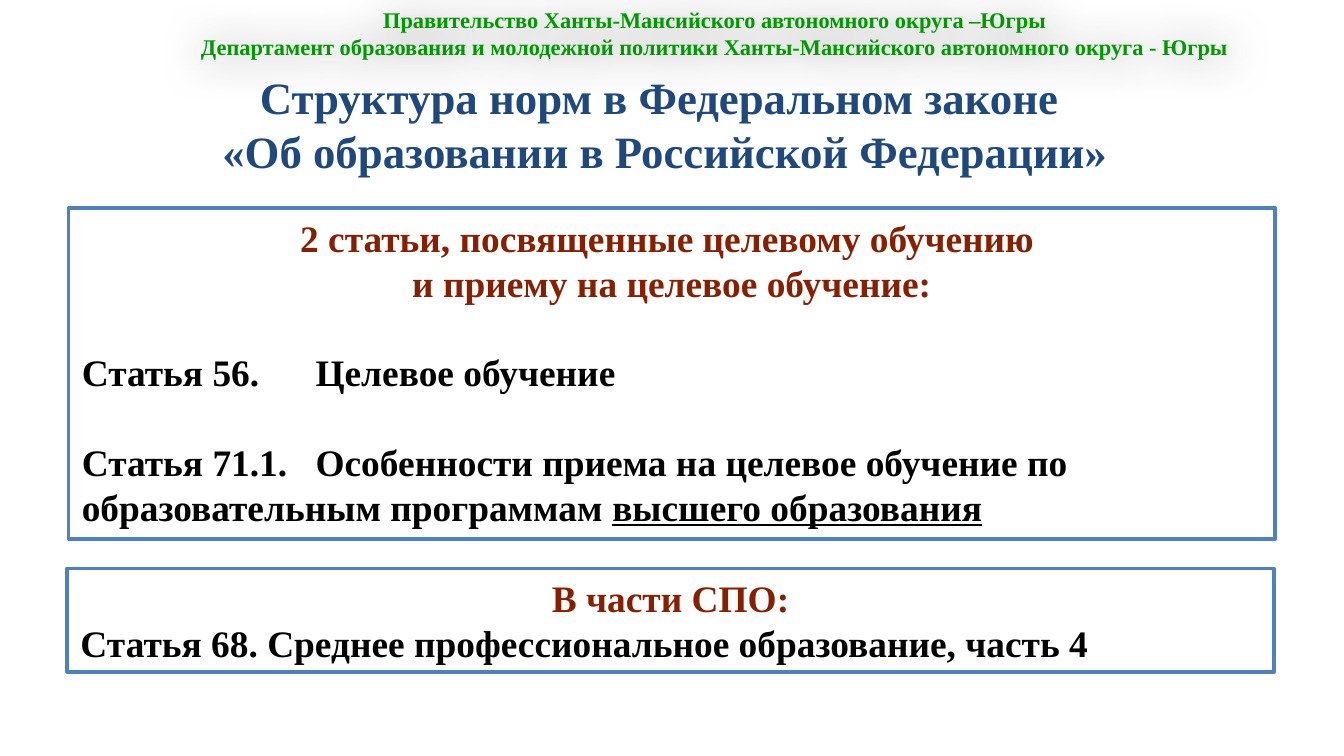
from dataclasses import dataclass

from lxml import etree
from pptx import Presentation
from pptx.dml.color import RGBColor
from pptx.enum.shapes import MSO_SHAPE
from pptx.enum.text import MSO_ANCHOR, MSO_AUTO_SIZE, PP_ALIGN
from pptx.oxml import parse_xml
from pptx.oxml.ns import nsdecls, qn
from pptx.util import Inches, Pt

GREEN = RGBColor(0x00, 0x99, 0x00)
NAVY = RGBColor(0x1F, 0x49, 0x7D)
BROWN = RGBColor(0x87, 0x1F, 0x03)
BLACK = RGBColor(0x00, 0x00, 0x00)
WHITE = RGBColor(0xFF, 0xFF, 0xFF)
BORDER = RGBColor(0x4F, 0x81, 0xBD)
FONT = "Times New Roman"
RECTANGLE = MSO_SHAPE.RECTANGLE
LEFT, CENTER = PP_ALIGN.LEFT, PP_ALIGN.CENTER
TOP = MSO_ANCHOR.TOP
FIT_SHAPE, FIXED = MSO_AUTO_SIZE.SHAPE_TO_FIT_TEXT, MSO_AUTO_SIZE.NONE

# Widescreen, 16:9
WIDTH = Inches(10)
HEIGHT = WIDTH * 9 // 16
ARTICLE_TAB = Inches(1.74)
ARTICLE_GAP = Pt(24)


@dataclass(frozen=True)
class Line:
    text: str
    color: RGBColor
    align: PP_ALIGN = CENTER
    underlined: str = ""
    gap: int = 0


@dataclass(frozen=True)
class Block:
    left: float  # inches
    top: float
    width: float
    height: float
    size: int  # points
    lines: tuple[Line, ...]
    framed: bool = False
    grows: bool = True
    glow: bool = False


def add_tab_stop(paragraph) -> None:
    tabs = etree.SubElement(paragraph._p.get_or_add_pPr(), qn("a:tabLst"))
    etree.SubElement(tabs, qn("a:tab"), pos=str(int(ARTICLE_TAB)), algn="l")


def add_soft_shadow(shape) -> None:
    shape._element.spPr.append(parse_xml(
        f'<a:effectLst {nsdecls("a")}>'
        '<a:outerShdw blurRad="292100" dist="0" dir="0" algn="ctr" rotWithShape="0">'
        '<a:srgbClr val="333333"><a:alpha val="65000"/></a:srgbClr>'
        '</a:outerShdw></a:effectLst>'))


def write_line(paragraph, line: Line, size: int) -> None:
    if "\t" in line.text:
        add_tab_stop(paragraph)
    paragraph.alignment = line.align
    if line.gap:
        paragraph.space_before = line.gap
    for text, underline in ((line.text, False), (line.underlined, True)):
        if not text:
            continue
        run = paragraph.add_run()
        run.text = text
        run.font.name, run.font.size, run.font.bold = FONT, Pt(size), True
        run.font.color.rgb = line.color
        if underline:
            run.font.underline = True


def draw_block(slide, block: Block) -> None:
    place = [Inches(v) for v in (block.left, block.top, block.width, block.height)]
    if block.framed:
        shape = slide.shapes.add_shape(RECTANGLE, *place)
        shape.shadow.inherit = False
        shape.fill.solid()
        shape.fill.fore_color.rgb = WHITE
        shape.line.color.rgb = BORDER
        shape.line.width = Pt(2)
    else:
        shape = slide.shapes.add_textbox(*place)
    if block.glow:
        add_soft_shadow(shape)

    frame = shape.text_frame
    frame.word_wrap = True
    frame.vertical_anchor = TOP
    frame.auto_size = FIT_SHAPE if block.grows else FIXED
    for index, line in enumerate(block.lines):
        paragraph = frame.add_paragraph() if index else frame.paragraphs[0]
        write_line(paragraph, line, block.size)


BLOCKS = (
    # Issuing authorities
    Block(1.09, 0, 8.46, 0.5, 12, (
        Line("Правительство Ханты-Мансийского автономного округа –Югры", GREEN),
        Line("Департамент образования и молодежной политики "
             "Ханты-Мансийского автономного округа - Югры", GREEN),
    ), glow=True),
    # Title
    Block(0.3, 0.47, 9.29, 0.47, 24, (
        Line("Структура норм в Федеральном законе ", NAVY),
        Line("«Об образовании в Российской Федерации»", NAVY),
    ), grows=False),
    # Articles on targeted training
    Block(0.51, 1.55, 8.98, 2.46, 20, (
        Line("2 статьи, посвященные целевому обучению ", BROWN),
        Line("и приему на целевое обучение:", BROWN),
        Line("Статья 56.\tЦелевое обучение", BLACK, LEFT, gap=ARTICLE_GAP),
        Line("Статья 71.1.\tОсобенности приема на целевое обучение по "
             "образовательным программам ", BLACK, LEFT,
             "высшего образования", ARTICLE_GAP),
    ), framed=True),
    # Vocational education
    Block(0.5, 4.23, 8.98, 0.77, 20, (
        Line("В части СПО:", BROWN),
        Line("Статья 68. Среднее профессиональное образование, часть 4", BLACK, LEFT),
    ), framed=True),
)


def main() -> None:
    deck = Presentation()
    deck.slide_width, deck.slide_height = WIDTH, HEIGHT
    slide = deck.slides.add_slide(deck.slide_layouts[6])
    for block in BLOCKS:
        draw_block(slide, block)
    deck.save("out.pptx")


if __name__ == "__main__":
    main()
